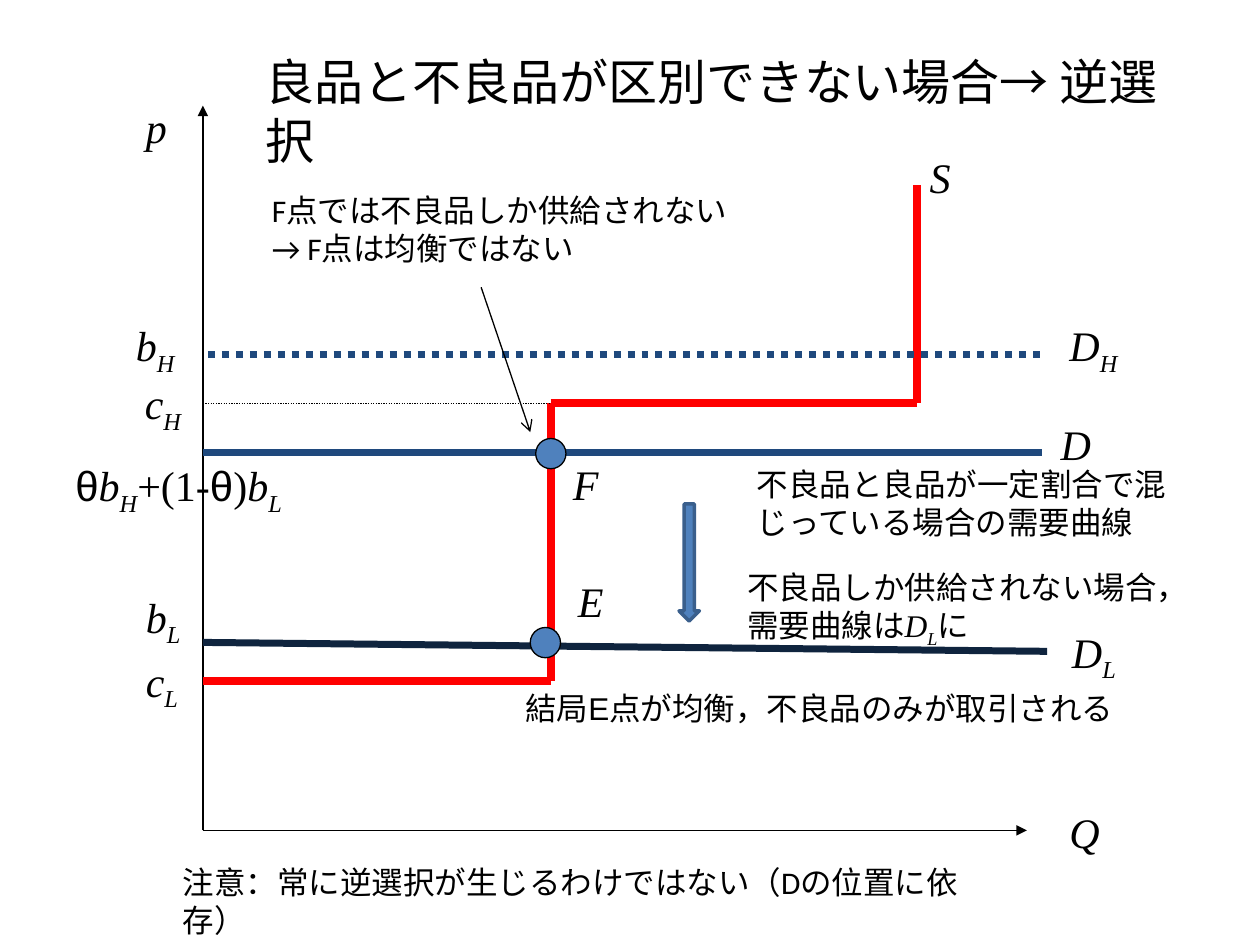
from lxml.etree import SubElement as Sub
from pptx import Presentation as Deck
from pptx.dml.color import RGBColor as Rgb
from pptx.enum.dml import MSO_LINE as Dash
from pptx.enum.shapes import MSO_CONNECTOR as Link, MSO_SHAPE as Kind
from pptx.enum.text import MSO_AUTO_SIZE as Fit
from pptx.oxml.ns import qn
from pptx.util import Cm, Pt

INK = {
    "black": "000000",
    "red": "FF0000",
    "navy": "0F243E",
    "blue": "1F497D",
    "fill": "4F81BD",
    "edge": "3A5F8C",
}
FORM = {
    "var": {"name": "Times New Roman", "italic": True},
    "sub": {"name": "Times New Roman", "italic": True},
    "math": {"name": "Times New Roman", "italic": False},
    "sans": {"name": "Arial", "italic": False},
    "note": {"name": "Calibri", "italic": False},
}

deck = Deck()
deck.slide_width, deck.slide_height = Cm(25.4), Cm(19.05)
slide = deck.slides.add_slide(deck.slide_layouts[6])
shapes = slide.shapes


def paint(line, ink, width):
    line.color.rgb = Rgb.from_string(INK[ink])
    line.width = Pt(width)


def write(box, size, paras):
    frame = shapes.add_textbox(*map(Cm, box)).text_frame
    frame.word_wrap = True
    frame.auto_size = Fit.SHAPE_TO_FIT_TEXT
    for i, parts in enumerate(paras):
        para = frame.add_paragraph() if i else frame.paragraphs[0]
        for text, form in parts:
            run = para.add_run()
            run.text = text
            run.font.size = Pt(size)
            run.font.color.rgb = Rgb.from_string(INK["black"])
            for key, value in FORM[form].items():
                setattr(run.font, key, value)
            if form == "sub":
                run.font._element.set("baseline", "-25000")


left, base, step, top, end = 4.09, 16.74, 11.1, 8.13, 18.49
low, mid, high, right = 13.72, 9.12, 7.14, 21.01

lines = [
    (left, base, 20.7, base, "black", 0.75, None, "triangle"),
    (left, base, left, 2.13, "black", 0.75, None, "triangle"),
    (left, low, step, low, "red", 4.5, None, None),
    (step, low, step, top, "red", 4.5, None, None),
    (step, top, end, top, "red", 4.5, None, None),
    (end, top, end, 3.73, "red", 4.5, None, None),
    (left, 12.95, 21.11, 13.13, "navy", 4, None, None),
    (left, mid, right, mid, "blue", 4, None, None),
    (left, top, step, top, "black", 0.75, Dash.ROUND_DOT, None),
    (4.19, high, right, high, "blue", 4, Dash.ROUND_DOT, None),
    (9.7, 5.79, 10.69, 8.71, "black", 0.75, None, "arrow"),
]
for *ends, ink, width, dash, head in lines:
    wire = shapes.add_connector(Link.STRAIGHT, *map(Cm, ends))
    paint(wire.line, ink, width)
    if dash:
        wire.line.dash_style = dash
    if head:
        Sub(wire.line._get_or_add_ln(), qn("a:tailEnd"), type=head)
    Sub(wire._element.spPr, qn("a:effectLst"))

marks = [
    (Kind.OVAL, (10.69, 12.65, 0.61, 0.61), "black", 0.75),
    (Kind.OVAL, (10.8, 8.84, 0.61, 0.61), "black", 0.75),
    (Kind.DOWN_ARROW, (13.69, 10.16, 0.41, 2.36), "edge", 2),
]
for kind, box, ink, width in marks:
    mark = shapes.add_shape(kind, *map(Cm, box))
    mark.shadow.inherit = False
    mark.fill.solid()
    mark.fill.fore_color.rgb = Rgb.from_string(INK["fill"])
    paint(mark.line, ink, width)

names = [
    ("p", "", 2.69, 1.93, 0.99),
    ("Q", "", 21.31, 16.13, 1.4),
    ("S", "", 18.49, 2.92, 1.19),
    ("D", "L", 21.36, 12.5, 1.6),
    ("D", "", 21.13, 8.31, 3.81),
    ("D", "H", 21.31, 6.32, 1.7),
    ("c", "H", 2.67, 7.49, 1.4),
    ("c", "L", 2.69, 13.08, 1.4),
    ("b", "H", 2.49, 6.32, 1.4),
    ("b", "L", 2.69, 11.79, 1.4),
    ("E", "", 11.4, 11.48, 0.99),
    ("F", "", 11.3, 9.12, 0.99),
]
for name, sub, x, y, width in names:
    parts = [(name, "var")] + ([(sub, "sub")] if sub else [])
    write((x, y, width, 1.27), 24, [parts])

notes = [
    ((5.11, 0.91, 19.2, 1.45), 28,
     [[("良品と不良品が区別できない場合→ 逆選択", "sans")]]),
    ((15.01, 9.25, 9.4, 1.8), 18,
     [[("不良品と良品が一定割合で混じっている場合の需要曲線", "sans")]]),
    ((14.81, 11.33, 9.09, 1.8), 18,
     [[("不良品しか供給されない場合，需要曲線は", "sans"),
       ("D", "var"), ("L", "sub"), ("に", "sans")]]),
    ((10.34, 13.77, 12.6, 1.02), 18,
     [[("結局E点が均衡，不良品のみが取引される", "sans")]]),
    ((5.23, 3.73, 10.01, 1.8), 18,
     [[("F点では不良品しか供給されない", "note")],
      [("→ F点は均衡ではない", "note")]]),
    ((1.27, 9.14, 5.26, 1.27), 24,
     [[("θ", "sans"), ("b", "var"), ("H", "sub"), ("+(1-", "math"),
       ("θ", "sans"), (")", "math"), ("b", "var"), ("L", "sub")]]),
    ((3.43, 17.27, 16.89, 1.02), 18,
     [[("注意：常に逆選択が生じるわけではない（Dの位置に依存）", "note")]]),
]
for box, size, paras in notes:
    write(box, size, paras)

deck.save("out.pptx")
